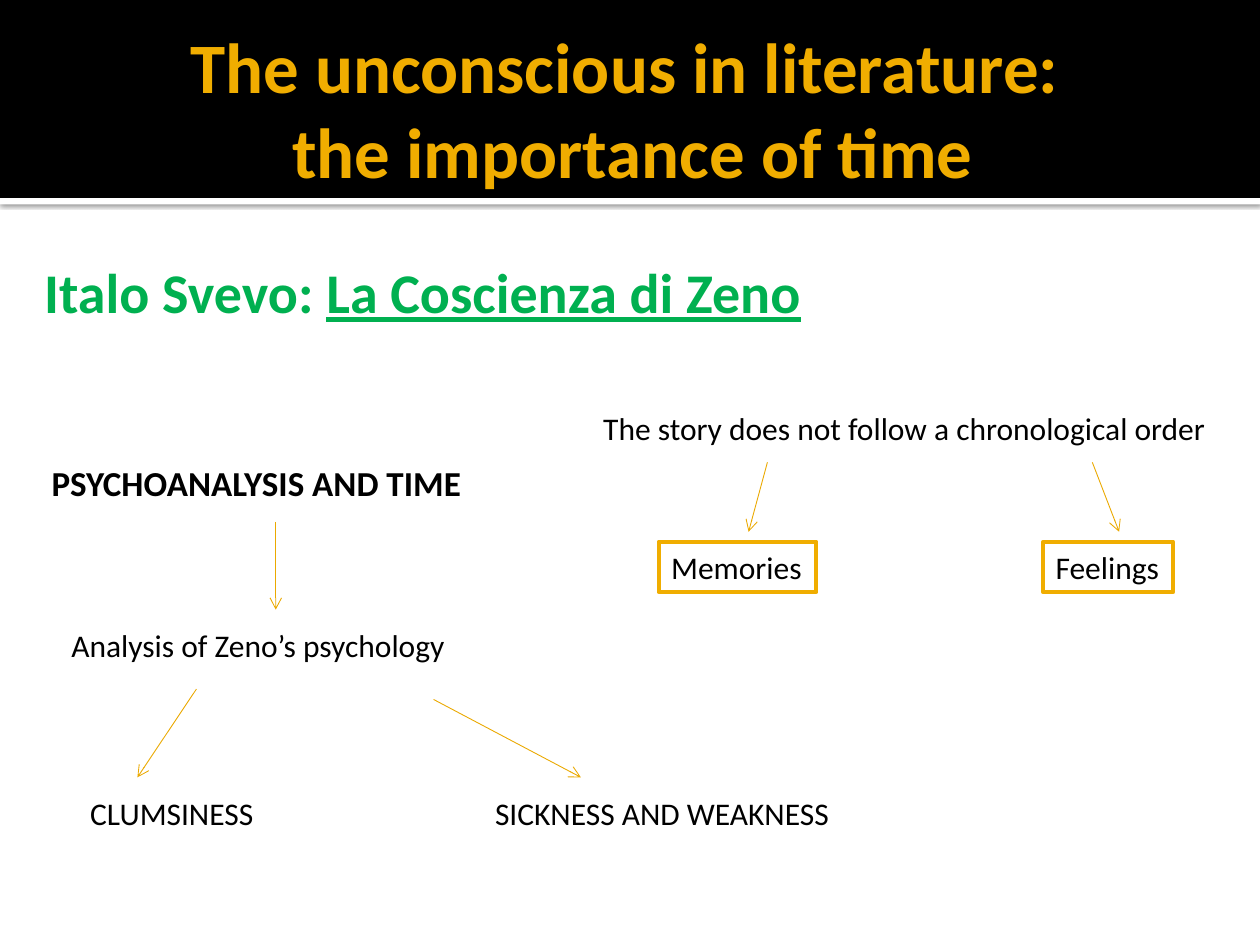
from dataclasses import dataclass

from lxml import etree
from pptx import Presentation
from pptx.dml.color import RGBColor
from pptx.enum.shapes import MSO_CONNECTOR as Connector, MSO_SHAPE as Shape
from pptx.enum.text import MSO_ANCHOR as Anchor, MSO_AUTO_SIZE as AutoSize, PP_ALIGN as Align
from pptx.oxml.ns import qn
from pptx.util import Cm, Pt

BLACK = RGBColor(0x00, 0x00, 0x00)
WHITE = RGBColor(0xFF, 0xFF, 0xFF)
GOLD = RGBColor(0xF0, 0xAD, 0x00)
ARROW_GOLD = RGBColor(0xEB, 0xA9, 0x00)
GREEN = RGBColor(0x00, 0xB0, 0x50)
FONT = "Calibri"
LABEL_HEIGHT = 1.02


@dataclass
class Box:
    """A rectangle measured in centimetres."""
    left: float
    top: float
    width: float
    height: float

    def inner(self, left, top, width, height):
        """Return a box placed relative to this one."""
        return Box(self.left + left, self.top + top, width, height)

    def lengths(self):
        """Return the four lengths for python-pptx."""
        return Cm(self.left), Cm(self.top), Cm(self.width), Cm(self.height)


def add_span(para, text, size, color, bold=False, underline=None):
    """Add one formatted run to a paragraph."""
    span = para.add_run()
    span.text = text
    font = span.font
    font.name, font.size, font.bold, font.underline = FONT, Pt(size), bold, underline
    font.color.rgb = color


def add_rectangle(page, box, fill, line=None):
    """Add a flat rectangle, outlined if a line colour is given."""
    rectangle = page.shapes.add_shape(Shape.RECTANGLE, *box.lengths())
    rectangle.shadow.inherit = False
    rectangle.fill.solid()
    rectangle.fill.fore_color.rgb = fill
    if line is None:
        rectangle.line.fill.background()
    else:
        rectangle.line.color.rgb = line
        rectangle.line.width = Pt(2.25)
    return rectangle


def add_label(page, box, text, size=18, bold=False, framed=False):
    """Add a left-aligned label, with a gold frame if asked."""
    if framed:
        label = add_rectangle(page, box, WHITE, GOLD)
    else:
        label = page.shapes.add_textbox(*box.lengths())
    frame = label.text_frame
    frame.word_wrap = not framed
    frame.vertical_anchor = Anchor.TOP
    para = frame.paragraphs[0]
    para.alignment = Align.LEFT
    add_span(para, text, size, BLACK, bold)


def add_arrow(page, box, start, end):
    """Draw a thin arrow between two points relative to the box."""
    points = [Cm(value) for x, y in (start, end) for value in (box.left + x, box.top + y)]
    arrow = page.shapes.add_connector(Connector.STRAIGHT, *points)
    arrow.line.color.rgb = ARROW_GOLD
    arrow.line.width = Pt(0.5)
    etree.SubElement(arrow.line._get_or_add_ln(), qn("a:tailEnd"), type="arrow")
    etree.SubElement(arrow.element.spPr, qn("a:effectLst"))


def add_stripe_shadow(stripe):
    """Cast a soft shadow below the stripe."""
    effects = stripe.element.spPr.find(qn("a:effectLst"))
    shadow = etree.SubElement(effects, qn("a:outerShdw"), blurRad=str(Pt(2.5)),
                              dist=str(Pt(0.8)), dir="5400000", algn="t", rotWithShape="0")
    color = etree.SubElement(shadow, qn("a:srgbClr"), val=str(BLACK))
    etree.SubElement(color, qn("a:alpha"), val="60000")


def place_placeholder(holder, box, insets, anchor):
    """Move a placeholder, set its insets and return its first paragraph."""
    holder.left, holder.top, holder.width, holder.height = box.lengths()
    frame = holder.text_frame
    frame.auto_size = AutoSize.NONE
    frame.word_wrap = True
    frame.vertical_anchor = anchor
    (frame.margin_left, frame.margin_top,
     frame.margin_right, frame.margin_bottom) = map(Cm, insets)
    para = frame.paragraphs[0]
    para.space_before = Pt(0)
    return para


def build_header(page, box):
    """Place the black band, its shadowed stripe and the title."""
    stripe = add_rectangle(page, box.inner(0, box.height, box.width, 0.13), WHITE)
    add_stripe_shadow(stripe)
    band = add_rectangle(page, box, BLACK)
    for position, backdrop in enumerate((stripe, band), start=2):
        page.shapes.element.insert(position, backdrop.element)
    para = place_placeholder(page.shapes.title, box.inner(1.27, 0.43, 22.86, 3.48),
                             (0.25, 0.13, 0.13, 0.13), Anchor.MIDDLE)
    para.alignment = Align.CENTER
    add_span(para, "The unconscious in literature: ", 40.5, GOLD, bold=True)
    para.add_line_break()
    add_span(para, "the importance of time", 40.5, GOLD, bold=True)


def build_subject(page, box):
    """Fill the body placeholder with the author and the book."""
    para = place_placeholder(page.placeholders[1], box, (0.15, 0.25, 0.25, 0.13), Anchor.TOP)
    properties = para._p.get_or_add_pPr()
    properties.set("marL", str(Cm(1.22)))
    properties.set("indent", str(Cm(-0.89)))
    etree.SubElement(properties, qn("a:buNone"))
    add_span(para, "Italo Svevo: ", 32, GREEN, bold=True)
    add_span(para, "La Coscienza di Zeno", 32, GREEN, bold=True, underline=True)


def build_psychology(page, box):
    """Place the tree that leads from psychoanalysis to Zeno's traits."""
    add_label(page, box.inner(0, 0, 9.93, 1.12), "PSYCHOANALYSIS AND TIME", 20, bold=True)
    labels = (("SICKNESS AND WEAKNESS", 8.94, 6.71, 8.13),
              ("Analysis of Zeno’s psychology", 0.4, 3.33, 8.53),
              ("CLUMSINESS", 0.78, 6.71, 6.76))
    for text, left, top, width in labels:
        add_label(page, box.inner(left, top, width, LABEL_HEIGHT), text)
    arrows = (((4.77, 1.35), (4.77, 3.12)),
              ((3.17, 4.72), (1.98, 6.5)),
              ((7.95, 4.93), (10.92, 6.5)))
    for start, end in arrows:
        add_arrow(page, box, start, end)


def build_story(page, box):
    """Place the remark on the story with its two framed outcomes."""
    add_label(page, box.inner(0, 0, box.width, LABEL_HEIGHT),
              "The story does not follow a chronological order")
    outcomes = (("Memories", 1.37, 3.18, 3.56, 3.18),
                ("Feelings", 9.12, 2.62, 10.11, 10.65))
    for text, left, width, arrow_start, arrow_end in outcomes:
        add_label(page, box.inner(left, 2.79, width, LABEL_HEIGHT), text, framed=True)
        add_arrow(page, box, (arrow_start, 1.19), (arrow_end, 2.59))


def main():
    """Build the slide and save the deck."""
    deck = Presentation()
    deck.slide_width, deck.slide_height = Cm(25.4), Cm(19.05)
    page = deck.slides.add_slide(deck.slide_layouts[1])
    build_header(page, Box(0, 0, 25.4, 3.99))
    build_subject(page, Box(0.41, 4.95, 23.44, 12.78))
    build_psychology(page, Box(0.79, 9.17, 17.07, 7.73))
    build_story(page, Box(11.91, 8.13, 12.7, 3.81))
    deck.save("out.pptx")


if __name__ == "__main__":
    main()
